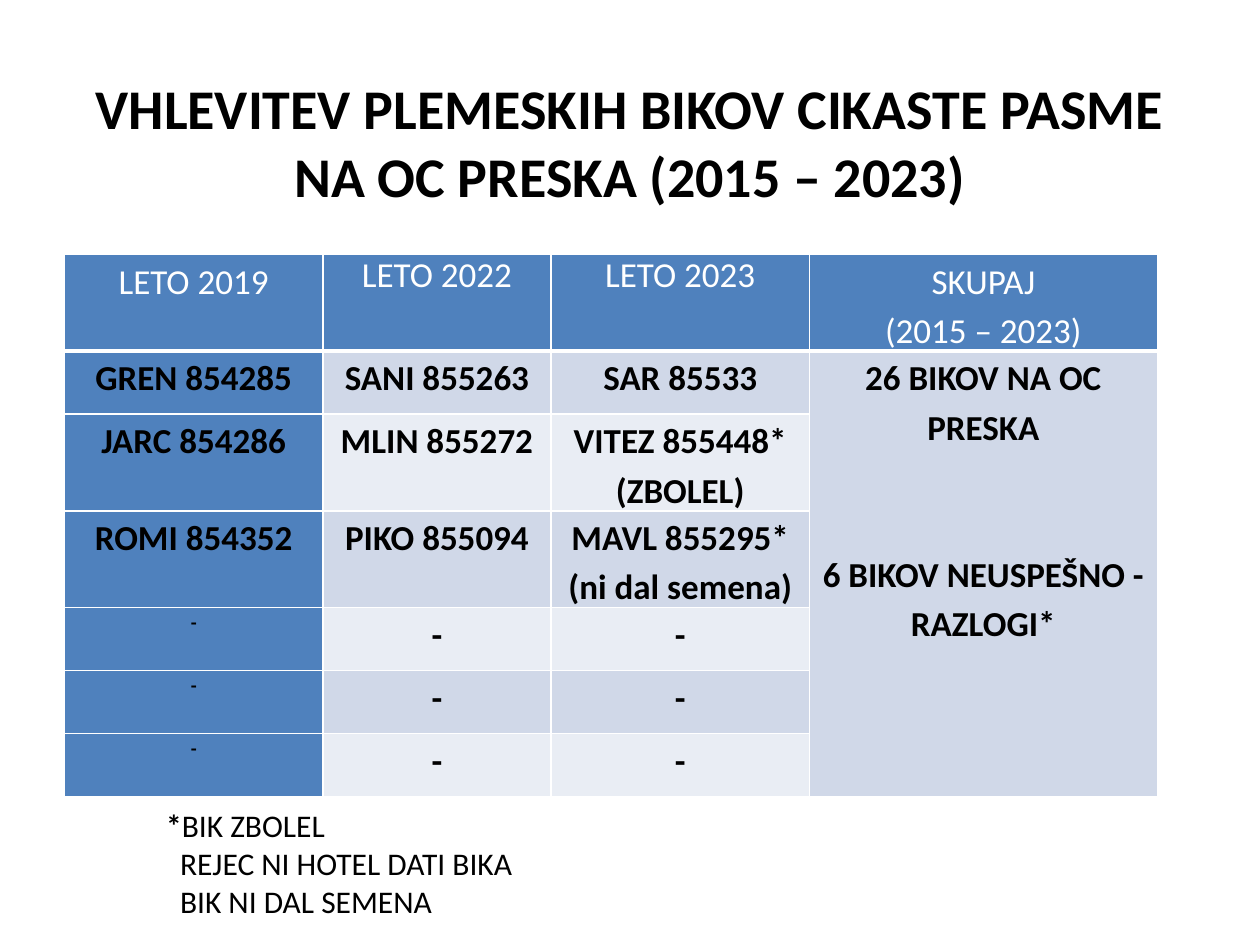
from pptx import Presentation
from pptx.dml.color import RGBColor
from pptx.enum.text import MSO_ANCHOR, PP_ALIGN
from pptx.oxml import parse_xml
from pptx.oxml.ns import nsdecls
from pptx.util import Cm, Pt

BLUE, PALE, LIGHT = "4F81BD", "D0D8E8", "E9EDF4"
WHITE, BLACK = "FFFFFF", "000000"
COLS = [5.21, 4.6, 5.21, 7.01]
ROWS = [1.83, 1.27, 1.83, 1.83, 1.27, 1.27, 1.27]
DASHES = ["-", "-", "-", ""]
DATA = [
    ["LETO 2019", "LETO 2022", "LETO 2023", "SKUPAJ\n(2015 – 2023)"],
    ["GREN 854285", "SANI 855263", "SAR 85533",
     "26 BIKOV NA OC PRESKA\n6 BIKOV NEUSPEŠNO - RAZLOGI*"],
    ["JARC 854286", "MLIN 855272", "VITEZ 855448*\n(ZBOLEL)", ""],
    ["ROMI 854352", "PIKO 855094", "MAVL 855295*\n(ni dal semena)", ""],
    DASHES, DASHES, DASHES,
]


def color(code):
    """Turn a hex string into a colour."""
    return RGBColor.from_string(code)


def style(font, size, bold=False, code=BLACK):
    """Set face, size, weight and colour of a font."""
    font.name, font.size, font.bold = "Calibri", Pt(size), bold
    font.color.rgb = color(code)


def add_text(slide, box, text):
    """Add a wrapping text box and return its frame."""
    frame = slide.shapes.add_textbox(*map(Cm, box)).text_frame
    frame.word_wrap = True
    frame.text = text
    return frame


def add_title(slide, box):
    """Place the centred title in its box."""
    frame = add_text(slide, box, "VHLEVITEV PLEMESKIH BIKOV CIKASTE PASME "
                                 "NA OC PRESKA (2015 – 2023)")
    frame.vertical_anchor = MSO_ANCHOR.MIDDLE
    line = frame.paragraphs[0]
    line.alignment = PP_ALIGN.CENTER
    style(line.font, 32, True)


def add_edges(cell, base):
    """Draw white cell borders, with the given width at the base."""
    props = cell._tc.get_or_add_tcPr()
    for side, width in zip("LRTB", (1, 1, 1, base)):
        props.append(parse_xml(
            f'<a:ln{side} {nsdecls("a")} w="{Pt(width)}"><a:solidFill>'
            f'<a:srgbClr val="{WHITE}"/></a:solidFill></a:ln{side}>'))


def fill_cell(cell, text, row, col):
    """Write and style one cell by its row and column."""
    head = row == 0
    add_edges(cell, 3 if head else 1)
    cell.fill.solid()
    shade = PALE if row % 2 or col == 3 else LIGHT
    cell.fill.fore_color.rgb = color(BLUE if head or col == 0 else shade)
    cell.margin_left = cell.margin_right = Cm(0.19)
    cell.margin_top = cell.margin_bottom = 0
    cell.text = text
    for line in cell.text_frame.paragraphs:
        line.alignment = PP_ALIGN.CENTER
        line.line_spacing = 1 if head and col in (1, 2) else 1.15
        size = 11 if col == 0 and text == "-" else 20
        style(line.font, size, not head, WHITE if head else BLACK)


def add_grid(slide, box):
    """Place the table of bulls in its box."""
    grid = slide.shapes.add_table(len(ROWS), len(COLS), *map(Cm, box)).table
    for part, size in zip(grid.columns, COLS):
        part.width = Cm(size)
    for part, size in zip(grid.rows, ROWS):
        part.height = Cm(size)
    for row, texts in enumerate(DATA):
        for col, text in enumerate(texts):
            fill_cell(grid.cell(row, col), text, row, col)
    total = grid.cell(1, 3)
    total.merge(grid.cell(len(ROWS) - 1, 3))
    total.text_frame.paragraphs[1].space_before = Pt(56)


def add_notes(slide, box):
    """Place the footnote, its later lines set in past the star."""
    frame = add_text(slide, box, "*\nREJEC NI HOTEL DATI BIKA\nBIK NI DAL SEMENA")
    first, *rest = frame.paragraphs
    style(first.runs[0].font, 18, True)
    run = first.add_run()
    run.text = "BIK ZBOLEL"
    style(run.font, 18)
    for line in rest:
        line._p.get_or_add_pPr().set("marL", str(Cm(0.28)))
        style(line.font, 18)


def main():
    """Build the slide and save it."""
    deck = Presentation()
    deck.slide_width, deck.slide_height = Cm(25.4), Cm(19.05)
    slide = deck.slides.add_slide(deck.slide_layouts[6])
    add_title(slide, (1.27, 0.76, 22.86, 4.17))
    add_grid(slide, (1.3, 5.13, sum(COLS), sum(ROWS)))
    add_notes(slide, (3.1, 16.13, 7.57, 2.57))
    deck.save("out.pptx")


if __name__ == "__main__":
    main()
